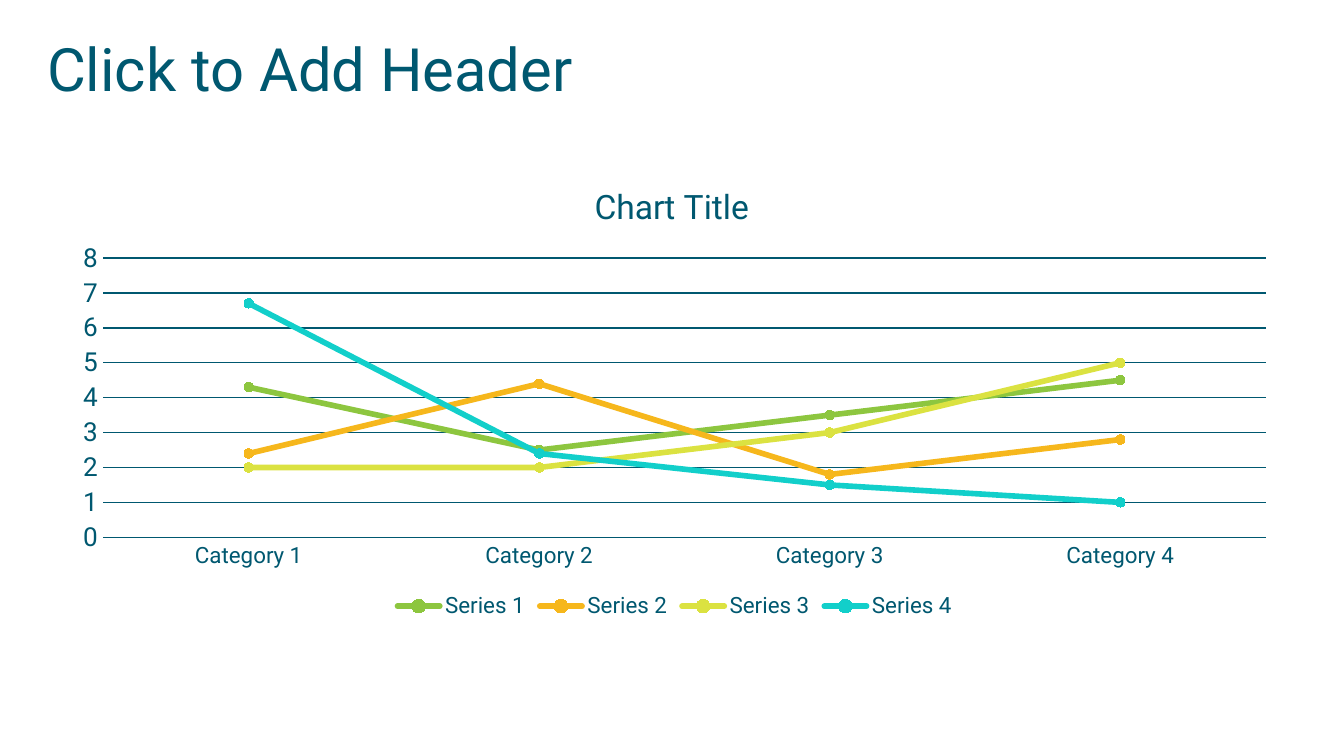
from lxml import etree
from pptx import Presentation
from pptx.chart import data
from pptx.dml.color import RGBColor
from pptx.enum import chart as ch, text
from pptx.oxml import ns
from pptx.util import Pt

COLORS = {
    "text": "005870",
    "Series 1": "8DC63F",
    "Series 2": "F6B71C",
    "Series 3": "DBE241",
    "Series 4": "12CFCA",
}
CATEGORIES = ["Category 1", "Category 2", "Category 3", "Category 4"]
SERIES = {
    "Series 1": [4.3, 2.5, 3.5, 4.5],
    "Series 2": [2.4, 4.4, 1.8, 2.8],
    "Series 3": [2, 2, 3, 5],
    "Series 4": [6.7, 2.4, 1.5, 1],
}


def color(name):
    return RGBColor.from_string(COLORS[name])


def style_font(font, size):
    font.name = "Roboto"
    font.size = Pt(size)
    font.bold = False
    font.color.rgb = color("text")


def style_line(line, name, width):
    line.color.rgb = color(name)
    line.width = Pt(width)


def set_layout(parent, before, **places):
    """Place a chart part by fractions of the chart, ahead of the named child."""
    for old in parent.findall(ns.qn("c:layout")):
        parent.remove(old)
    layout = etree.Element(ns.qn("c:layout"))
    manual = etree.SubElement(layout, ns.qn("c:manualLayout"))
    for tag, value in places.items():
        etree.SubElement(manual, ns.qn(f"c:{tag}")).set("val", str(value))
    parent.find(ns.qn(before)).addprevious(layout)


def add_header(slide):
    header = slide.shapes.add_textbox(Pt(25.2), Pt(17.3), Pt(670.3), Pt(36))
    frame = header.text_frame
    frame.word_wrap = True
    frame.vertical_anchor = text.MSO_ANCHOR.TOP
    frame.margin_left = frame.margin_right = 0
    frame.margin_top = frame.margin_bottom = 0
    frame.text = "Click to Add Header"
    style_font(frame.paragraphs[0].runs[0].font, 32)


def add_line_chart(slide):
    chart_data = data.CategoryChartData()
    chart_data.categories = CATEGORIES
    for name, values in SERIES.items():
        chart_data.add_series(name, values)
    chart = slide.shapes.add_chart(
        ch.XL_CHART_TYPE.LINE_MARKERS,
        Pt(31.7), Pt(82.8), Pt(659.5), Pt(252), chart_data,
    ).chart
    style_font(chart.font, 12)
    chart.plots[0].vary_by_categories = False
    set_layout(chart.plots[0]._element.getparent(), "c:lineChart",
               layoutTarget="inner", xMode="edge", yMode="edge",
               x=0.036, y=0.22, w=0.944, h=0.594)
    style_title(chart)
    style_axes(chart)
    style_series(chart)
    chart.has_legend = True
    chart.legend.position = ch.XL_LEGEND_POSITION.BOTTOM
    chart.legend.include_in_layout = False
    style_font(chart.legend.font, 12)


def style_title(chart):
    chart.has_title = True
    title = chart.chart_title
    title.text_frame.text = "Chart Title"
    style_font(title.text_frame.paragraphs[0].runs[0].font, 18)
    title.include_in_layout = False
    set_layout(title._element, "c:overlay",
               xMode="edge", yMode="edge", x=0.43, y=0.05)


def style_axes(chart):
    for axis, size in ((chart.category_axis, 12), (chart.value_axis, 14)):
        axis.major_tick_mark = ch.XL_TICK_MARK.NONE
        axis.minor_tick_mark = ch.XL_TICK_MARK.NONE
        style_font(axis.tick_labels.font, size)
    style_line(chart.category_axis.format.line, "text", 0.75)
    values = chart.value_axis
    values.minimum_scale, values.maximum_scale, values.major_unit = 0, 8, 1
    values.format.line.fill.background()
    values.has_major_gridlines = True
    style_line(values.major_gridlines.format.line, "text", 0.75)


def style_series(chart):
    for series in chart.plots[0].series:
        series.smooth = False
        style_line(series.format.line, series.name, 3)
        series.format.line._get_or_add_ln().set("cap", "rnd")
        marker = series.marker
        marker.style = ch.XL_MARKER_STYLE.CIRCLE
        marker.size = 5
        marker.format.fill.solid()
        marker.format.fill.fore_color.rgb = color(series.name)
        style_line(marker.format.line, series.name, 0.75)


def main():
    deck = Presentation()
    deck.slide_width, deck.slide_height = Pt(720), Pt(405)
    slide = deck.slides.add_slide(deck.slide_layouts[6])
    add_header(slide)
    add_line_chart(slide)
    deck.save("out.pptx")


if __name__ == "__main__":
    main()
